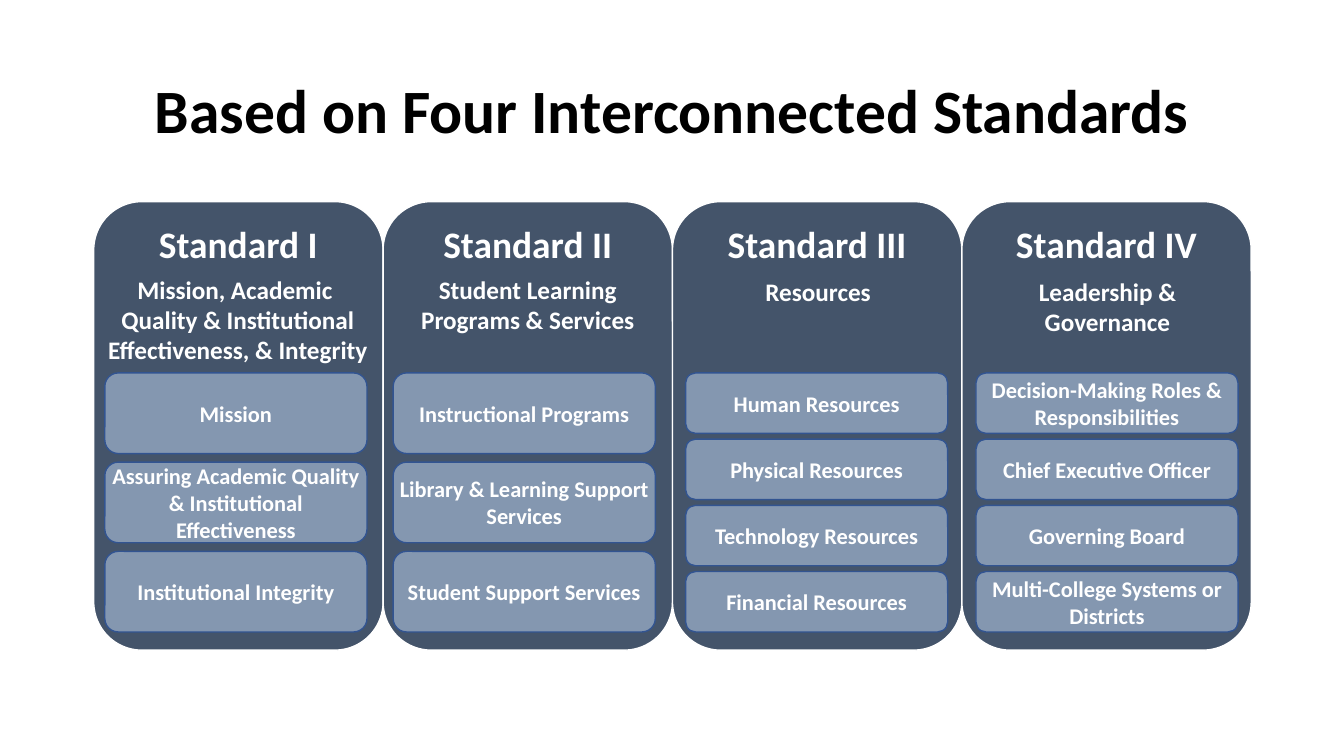
from pptx import Presentation
from pptx.dml.color import RGBColor
from pptx.enum import shapes, text
from pptx.util import Inches, Pt

prs = Presentation()
prs.slide_width, prs.slide_height = Inches(13.33), Inches(7.5)
s = prs.slides.add_slide(prs.slide_layouts[5])


def write(tf, words, size, color, anchor):
    tf.word_wrap = True
    tf.vertical_anchor = anchor
    p = tf.paragraphs[0]
    p.alignment = text.PP_ALIGN.CENTER
    for i, line in enumerate(words.split("\n")):
        if i:
            p.add_line_break()
        r = p.add_run()
        r.text = line
        r.font.name, r.font.size, r.font.bold = "Calibri", Pt(size), True
        r.font.color.rgb = RGBColor.from_string(color)
    return p


def add_box(at, words, size, anchor, fill=None, line=None, inset=0):
    sp = s.shapes.add_shape(shapes.MSO_SHAPE.ROUNDED_RECTANGLE, *map(Inches, at))
    sp.shadow.inherit = False
    if fill:
        sp.fill.solid()
        sp.fill.fore_color.rgb = RGBColor.from_string(fill)
        sp.line.color.rgb = RGBColor.from_string(line)
        sp.line.width = Pt(1)
    else:
        sp.fill.background()
        sp.line.fill.background()
    tf = sp.text_frame
    tf.margin_left = tf.margin_right = Inches(inset * 2)
    tf.margin_top = tf.margin_bottom = Inches(inset)
    write(tf, words, size, "FFFFFF", anchor)


TOP, MIDDLE = text.MSO_ANCHOR.TOP, text.MSO_ANCHOR.MIDDLE

# Title
title = s.shapes.title
title.left, title.top = Inches(0.92), Inches(0.4)
title.width, title.height = Inches(11.5), Inches(1.45)
p = write(title.text_frame, "Based on Four Interconnected Standards", 44, "000000", MIDDLE)
p.line_spacing = 0.9

# Columns: number, subject, subject (left, top, width), left of boxes, box height, boxes
columns = [
    ("I", "Mission, Academic \nQuality & Institutional Effectiveness, & Integrity",
     (0.96, 2.67, 2.8), 1.04, 0.8,
     ["Mission", "Assuring Academic Quality & Institutional Effectiveness",
      "Institutional Integrity"]),
    ("II", "Student Learning Programs & Services", (3.9, 2.67, 2.67), 3.9, 0.8,
     ["Instructional Programs", "Library & Learning Support Services",
      "Student Support Services"]),
    ("III", "Resources", (6.78, 2.69, 2.67), 6.8, 0.6,
     ["Human Resources", "Physical Resources", "Technology Resources",
      "Financial Resources"]),
    ("IV", "Leadership & Governance", (9.65, 2.69, 2.67), 9.68, 0.6,
     ["Decision-Making Roles & Responsibilities", "Chief Executive Officer",
      "Governing Board", "Multi-College Systems or Districts"]),
]
card_w = 2.87
boxes_top, boxes_bottom = 3.7, 6.27

# Cards behind everything else
for i, column in enumerate(columns):
    add_box((0.93 + i * card_w, 2, card_w, 4.45), f"Standard {column[0]}", 26.7, TOP,
            "44546A", "FFFFFF", inset=0.05)

# Subjects and evenly spread boxes
for number, subject, place, left, height, items in columns:
    add_box((*place, 1.06), subject, 18, TOP)
    step = (boxes_bottom - boxes_top - height) / (len(items) - 1)
    for j, item in enumerate(items):
        add_box((left, boxes_top + j * step, 2.6, height), item, 16, MIDDLE,
                "8497B0", "325491")

prs.save("out.pptx")
